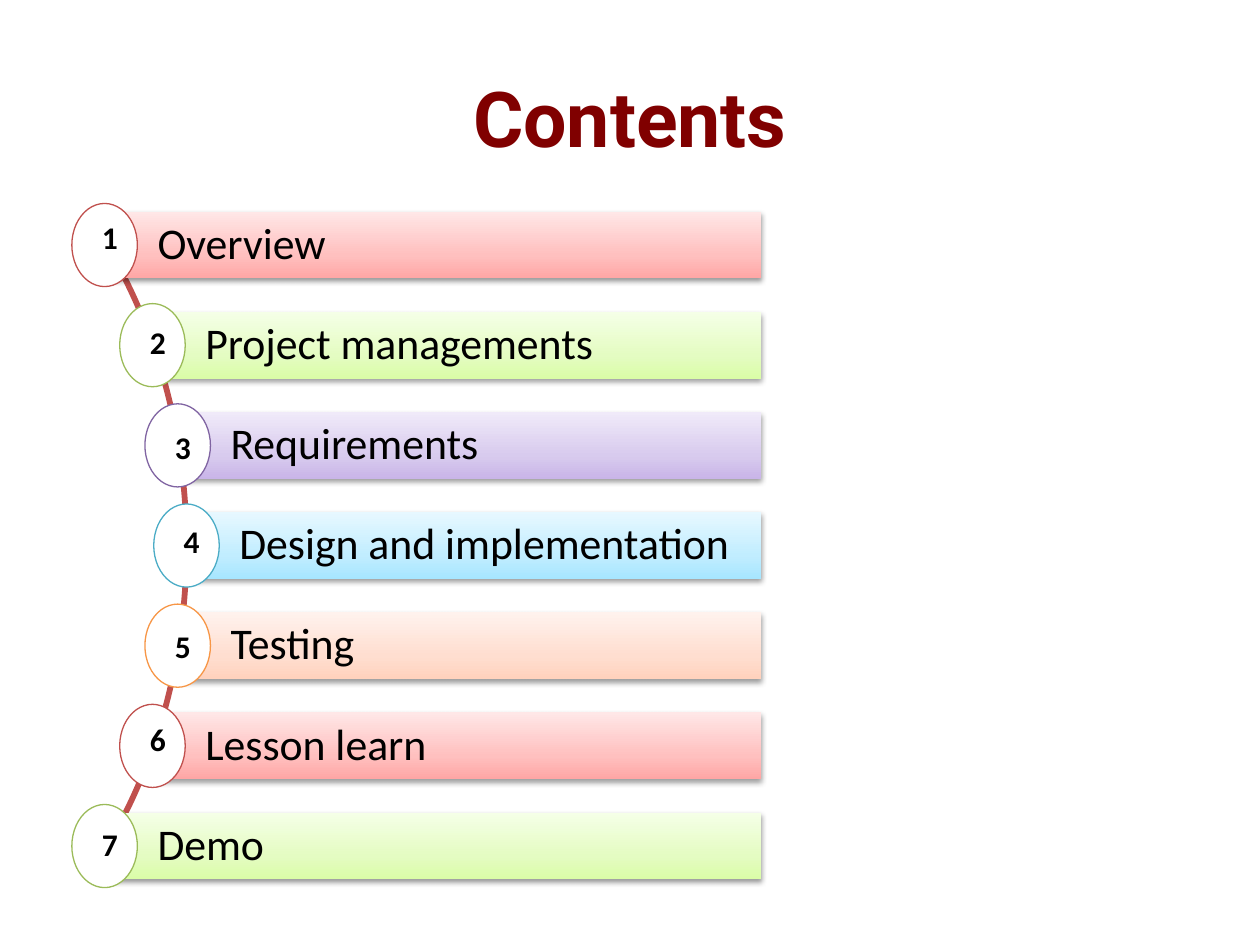
import copy
from dataclasses import dataclass

import pptx
import pptx.dml.color
import pptx.enum.shapes
import pptx.enum.text
import pptx.oxml
import pptx.oxml.ns
import pptx.util

Inches, Pt = pptx.util.Inches, pptx.util.Pt
SHAPE = pptx.enum.shapes.MSO_SHAPE
MIDDLE = pptx.enum.text.MSO_ANCHOR.MIDDLE
TOP = pptx.enum.text.MSO_ANCHOR.TOP
LEFT = pptx.enum.text.PP_ALIGN.LEFT
CENTER = pptx.enum.text.PP_ALIGN.CENTER

TITLE = "Contents"
# Topic, colour family, drop of its number below the top of the bar
TOPICS = [
    ("Overview", "red", 0),
    ("Project managements", "green", 0.04),
    ("Requirements", "purple", 0.08),
    ("Design and implementation", "blue", 0.03),
    ("Testing", "orange", 0.07),
    ("Lesson learn", "red", 0.01),
    ("Demo", "green", 0.05),
]


@dataclass(frozen=True)
class Theme:
    title_font: str = "Roboto"
    body_font: str = "Calibri"
    title_size: int = 44
    topic_size: int = 25
    number_size: int = 18
    title_color: str = "800000"
    text: str = "000000"
    paper: str = "FFFFFF"
    arc: str = "C0504D"


THEME = Theme()
# Badge outline, then the bar's gradient from bottom to top
FAMILIES = {
    "red": ("C0504D", ("FFA6A5", "FFC0BF", "FFE7E7")),
    "green": ("9BBB59", ("DAFDA7", "E4FCC2", "F5FFE7")),
    "purple": ("8064A2", ("C9B5E8", "D8CBEE", "F0EAF9")),
    "blue": ("4BACC6", ("A7E6FF", "C1EDFF", "E7F8FF")),
    "orange": ("F79646", ("FFD2BD", "FFDED0", "FFF2ED")),
}
GRADIENT_POSITIONS = (0, 0.35, 1)

FIRST_TOP, ROW_PITCH = 1.68, 0.795
BAR_HEIGHT, BAR_RIGHT = 0.53, 6.04
BAR_LEFTS = (0.83, 1.21, 1.41, 1.48)  # from the outer rows to the middle one
BADGE_WIDTH, BADGE_HEIGHT = 0.52, 0.66
NUMBER_WIDTH, NUMBER_HEIGHT = 0.25, 0.4
NUMBER_OFFSET = -0.12

SHADOW = (
    f'<a:effectLst {pptx.oxml.ns.nsdecls("a")}>'
    '<a:outerShdw blurRad="39370" dist="20320" dir="5400000" rotWithShape="0">'
    '<a:srgbClr val="000000"><a:alpha val="38000"/></a:srgbClr>'
    "</a:outerShdw></a:effectLst>"
)


def rgb(value):
    return pptx.dml.color.RGBColor.from_string(value)


def write(shape, text, size, font, color, bold=False, align=LEFT, anchor=MIDDLE):
    frame = shape.text_frame
    frame.word_wrap = True
    frame.vertical_anchor = anchor
    paragraph = frame.paragraphs[0]
    paragraph.alignment = align
    run = paragraph.add_run()
    run.text = text
    run.font.size = Pt(size)
    run.font.name = font
    run.font.bold = bold
    run.font.color.rgb = rgb(color)
    return paragraph


def add_outlined(slide, preset, box, line, width):
    shape = slide.shapes.add_shape(preset, *map(Inches, box))
    shape.shadow.inherit = False
    shape.fill.solid()
    shape.fill.fore_color.rgb = rgb(THEME.paper)
    shape.line.color.rgb = rgb(line)
    shape.line.width = Pt(width)
    return shape


def fill_gradient(shape, colors):
    """Fill from bottom to top with three colours."""
    shape.fill.gradient()
    shape.fill.gradient_angle = 90
    stop_list = shape._element.spPr.find(".//" + pptx.oxml.ns.qn("a:gsLst"))
    stop_list.append(copy.deepcopy(stop_list[-1]))
    for stop, position, color in zip(
        shape.fill.gradient_stops, GRADIENT_POSITIONS, colors
    ):
        stop.position = position
        stop.color.rgb = rgb(color)


def add_bar(slide, topic, colors, left, top):
    bar = slide.shapes.add_shape(
        SHAPE.RECTANGLE,
        *map(Inches, (left, top, BAR_RIGHT - left, BAR_HEIGHT)),
    )
    fill_gradient(bar, colors)
    bar.line.fill.background()
    bar._element.spPr.append(pptx.oxml.parse_xml(SHADOW))
    frame = bar.text_frame
    frame.margin_left = Inches(0.42)
    frame.margin_right = frame.margin_top = frame.margin_bottom = Inches(0.07)
    paragraph = write(bar, topic, THEME.topic_size, THEME.body_font, THEME.text)
    paragraph.line_spacing = 0.9


def add_number(slide, number, left, top):
    label = slide.shapes.add_textbox(
        *map(Inches, (left, top, NUMBER_WIDTH, NUMBER_HEIGHT))
    )
    label.text_frame.margin_right = 0
    write(label, str(number), THEME.number_size, THEME.body_font, THEME.text,
          bold=True, anchor=TOP)


def main():
    deck = pptx.Presentation()
    deck.slide_width, deck.slide_height = Inches(10), Inches(7.5)
    slide = deck.slides.add_slide(deck.slide_layouts[5])

    title = slide.shapes.title
    title.left, title.top, title.width, title.height = map(
        Inches, (0.5, 0.3, 9, 1.25)
    )
    write(title, TITLE, THEME.title_size, THEME.title_font, THEME.title_color,
          bold=True, align=CENTER)

    arc = add_outlined(
        slide, SHAPE.BLOCK_ARC, (-4.64, 0.41, 6.13, 7.85), THEME.arc, 2
    )
    arc.fill.fore_color.rgb = rgb(THEME.arc)
    for index, value in enumerate((189, 27, 0.003)):
        arc.adjustments[index] = value

    last = len(TOPICS) - 1
    for row, (topic, family, number_drop) in enumerate(TOPICS):
        outline, colors = FAMILIES[family]
        left = BAR_LEFTS[min(row, last - row)]
        top = FIRST_TOP + row * ROW_PITCH
        add_bar(slide, topic, colors, left, top)
        badge = (
            left - BADGE_WIDTH / 2,
            top + (BAR_HEIGHT - BADGE_HEIGHT) / 2,
            BADGE_WIDTH,
            BADGE_HEIGHT,
        )
        add_outlined(slide, SHAPE.OVAL, badge, outline, 0.75)
        add_number(slide, row + 1, left + NUMBER_OFFSET, top + number_drop)

    deck.save("out.pptx")


if __name__ == "__main__":
    main()
